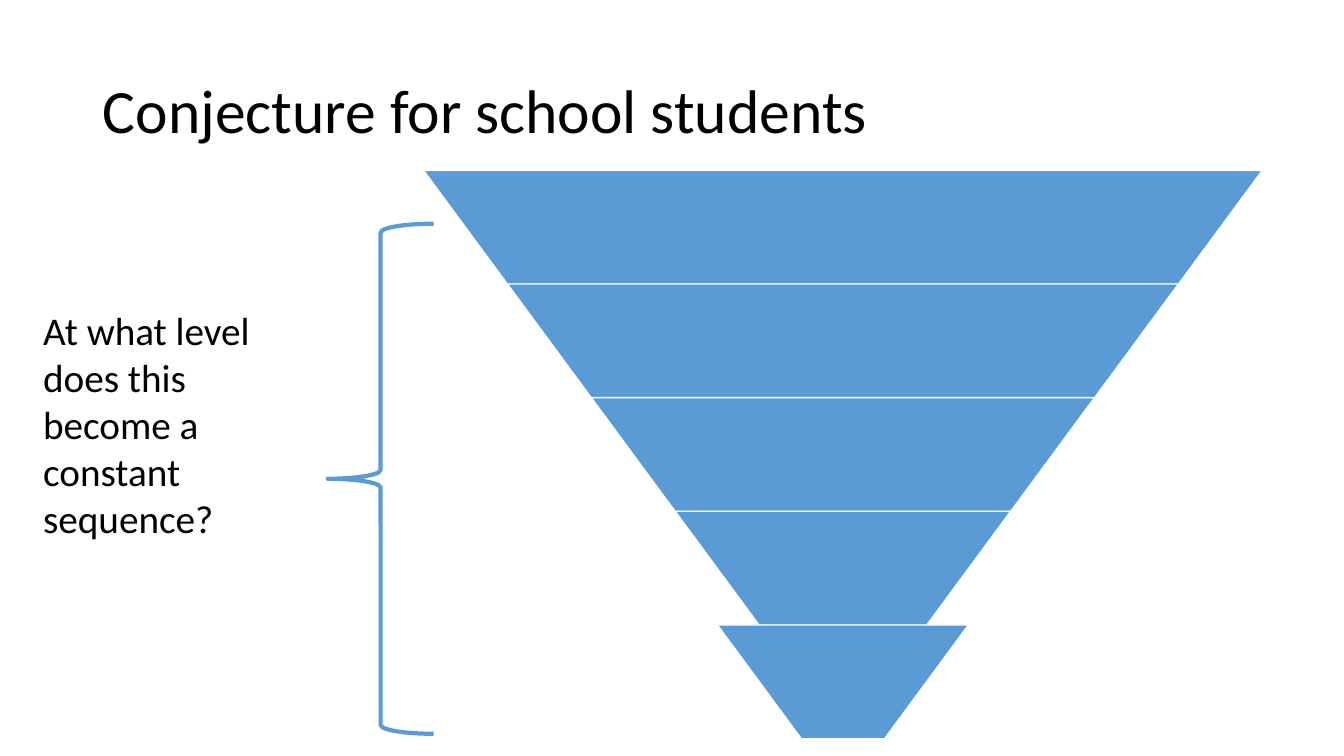
from dataclasses import dataclass

from pptx import Presentation
from pptx.dml.color import RGBColor
from pptx.enum.shapes import MSO_SHAPE
from pptx.enum.text import MSO_ANCHOR, PP_ALIGN
from pptx.util import Inches, Pt

COLORS = {"blue": "5B9BD5", "white": "FFFFFF", "black": "000000"}
FONT = "Calibri"

# Funnel geometry in inches
CENTER = 8.36
TOP = 1.69
PITCH = (6.2 - TOP) / 4
HEIGHT = 1.13
WIDEST = 8.32
SLANT = 0.737


@dataclass
class Box:
    left: float
    top: float
    width: float
    height: float

    def sides(self) -> list:
        return [Inches(n) for n in (self.left, self.top, self.width, self.height)]


@dataclass
class Level:
    row: int
    width: float

    def box(self) -> Box:
        return Box(CENTER - self.width / 2, TOP + self.row * PITCH, self.width, HEIGHT)


def color(name: str) -> RGBColor:
    return RGBColor.from_string(COLORS[name])


def write(shape, *lines: str, size: float, anchor=MSO_ANCHOR.TOP, spacing: float = 1.0) -> None:
    frame = shape.text_frame
    frame.word_wrap = True
    frame.vertical_anchor = anchor
    frame.text = "\n".join(lines)
    for para in frame.paragraphs:
        para.alignment = PP_ALIGN.LEFT
        para.line_spacing = spacing
        font = para.runs[0].font
        font.name, font.size = FONT, Pt(size)
        font.color.rgb = color("black")


def outline(shape, name: str, width: float) -> None:
    shape.shadow.inherit = False
    shape.line.color.rgb = color(name)
    shape.line.width = Pt(width)


def draw_level(shapes, level: Level) -> None:
    band = shapes.add_shape(MSO_SHAPE.TRAPEZOID, *level.box().sides())
    band.rotation = 180
    band.adjustments[0] = SLANT
    band.fill.solid()
    band.fill.fore_color.rgb = color("blue")
    outline(band, "white", 1)


def draw_brace(shapes, box: Box) -> None:
    brace = shapes.add_shape(MSO_SHAPE.LEFT_BRACE, *box.sides())
    brace.fill.background()
    outline(brace, "blue", 3)


def main() -> None:
    deck = Presentation()
    deck.slide_width, deck.slide_height = Inches(13.33), Inches(7.5)
    slide = deck.slides.add_slide(deck.slide_layouts[5])
    shapes = slide.shapes

    # Title
    title = shapes.title
    title.left, title.top, title.width, title.height = Box(0.92, 0.4, 11.5, 1.45).sides()
    write(title, "Conjecture for school students", size=44,
          anchor=MSO_ANCHOR.MIDDLE, spacing=0.9)

    # Funnel: each level loses a fifth of the widest, the last is wider
    levels = [Level(row, WIDEST * (1 - row / 5)) for row in range(4)]
    levels.append(Level(4, 2.49))
    for level in levels:
        draw_level(shapes, level)

    # Brace and question
    draw_brace(shapes, Box(3.25, 2.22, 1.05, 5.06))
    question = shapes.add_textbox(*Box(0.33, 2.99, 2.47, 2.46).sides())
    write(question, "At what level", "does this become a constant sequence?", size=28)

    deck.save("out.pptx")


if __name__ == "__main__":
    main()
